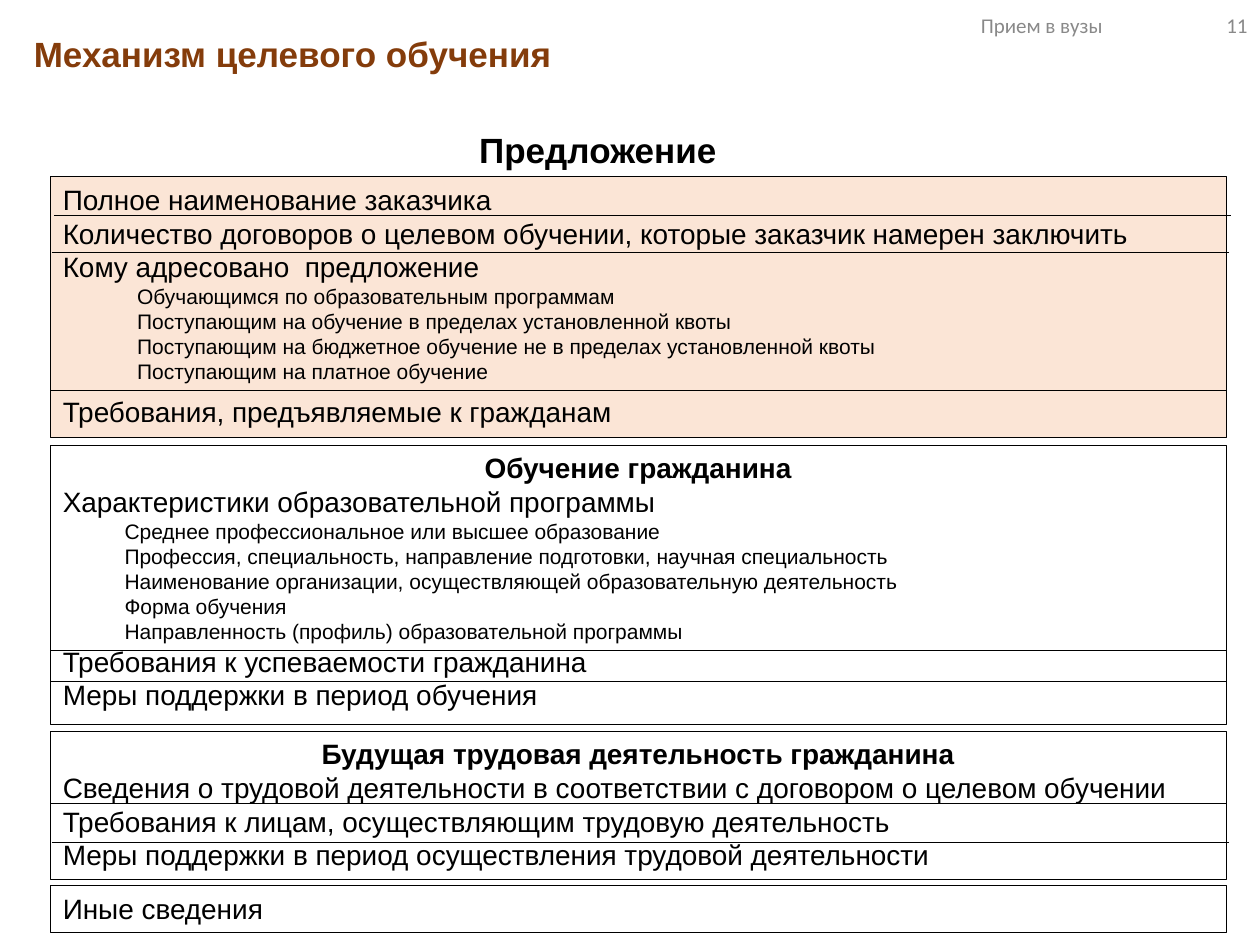
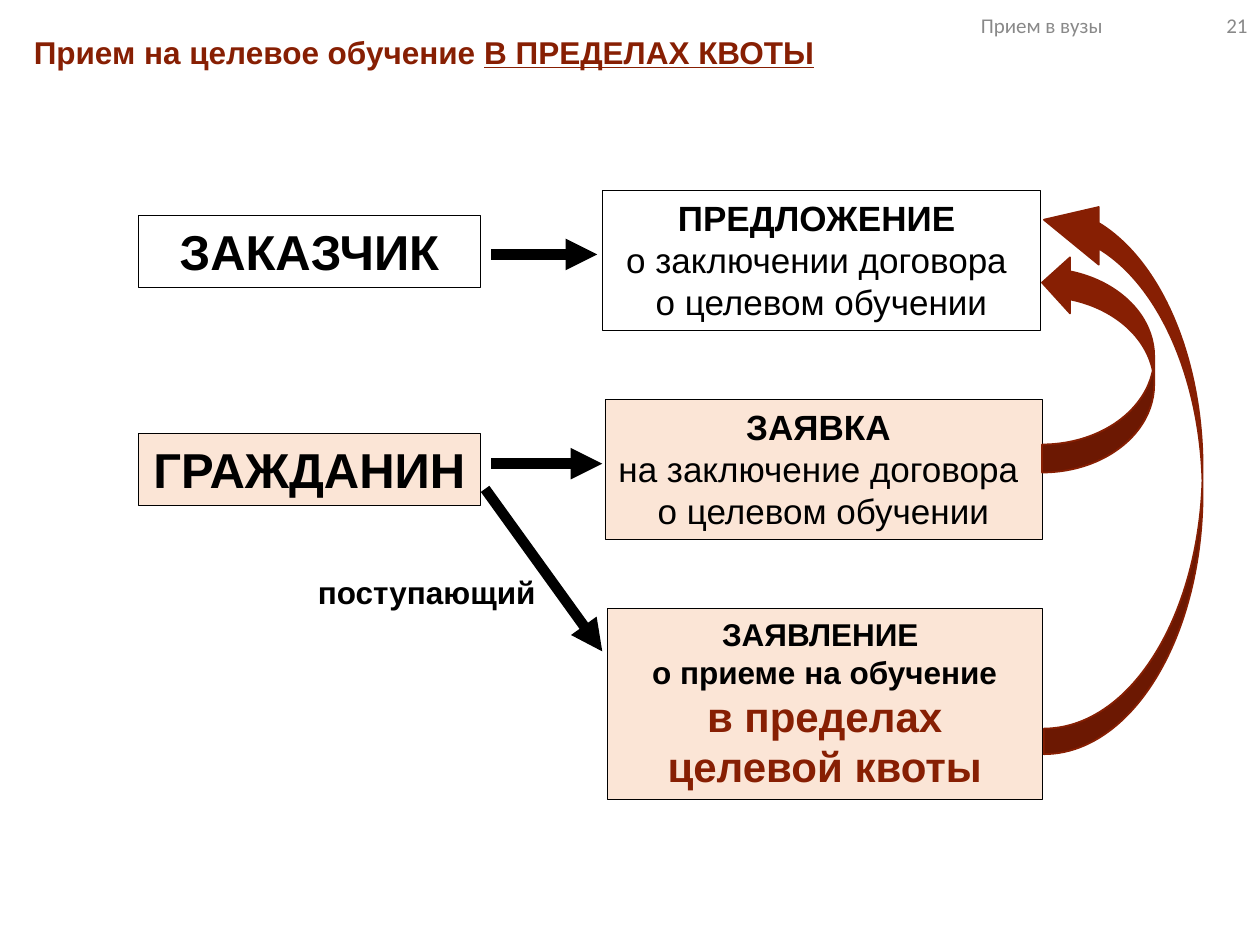
from lxml import etree
from pptx import Presentation
from pptx.dml.color import RGBColor
from pptx.enum.shapes import MSO_CONNECTOR, MSO_SHAPE
from pptx.enum.text import MSO_ANCHOR, PP_ALIGN
from pptx.oxml.ns import qn
from pptx.util import Inches, Pt

BLACK = RGBColor(0x00, 0x00, 0x00)
WHITE = RGBColor(0xFF, 0xFF, 0xFF)
PEACH = RGBColor(0xFB, 0xE5, 0xD6)
BROWN = RGBColor(0x84, 0x3C, 0x0B)
RUST = RGBColor(0x87, 0x1F, 0x03)
GREY = RGBColor(0x89, 0x89, 0x89)
LEFT, CENTER, RIGHT = PP_ALIGN.LEFT, PP_ALIGN.CENTER, PP_ALIGN.RIGHT
TOP, MIDDLE = MSO_ANCHOR.TOP, MSO_ANCHOR.MIDDLE
RECT, CURVED_ARROW = MSO_SHAPE.RECTANGLE, MSO_SHAPE.CURVED_UP_ARROW
STRAIGHT = MSO_CONNECTOR.STRAIGHT

# Content: every text is a list of (words, format) paragraphs
FOOTER = "Прием в вузы"
TITLE_11 = [("Механизм целевого обучения", dict(size=20, color=BROWN))]
TITLE_21 = [("Прием на целевое обучение ", dict(size=18, color=RUST)),
            ("В ПРЕДЕЛАХ КВОТЫ", dict(size=18, color=RUST, underline=True, same_line=True))]

HEAD = dict(bold=True, align=CENTER)
ADDRESSEE = dict(size=12, indent=0.59)
PROGRAM = dict(size=12, indent=0.49)

# Form sections: top, height, fill, paragraphs
FORM_LEFT, FORM_WIDTH = 0.4, 9.33
SECTIONS = [
    (1.4, 2.07, PEACH, [
        ("Полное наименование заказчика", {}),
        ("Количество договоров о целевом обучении, которые заказчик намерен заключить", {}),
        ("Кому адресовано  предложение", {}),
        ("Обучающимся по образовательным программам", ADDRESSEE),
        ("Поступающим на обучение в пределах установленной квоты", ADDRESSEE),
        ("Поступающим на бюджетное обучение не в пределах установленной квоты", ADDRESSEE),
        ("Поступающим на платное обучение", ADDRESSEE),
        ("Требования, предъявляемые к гражданам", dict(before=6))]),
    (3.53, 2.22, WHITE, [
        ("Обучение гражданина", HEAD),
        ("Характеристики образовательной программы", {}),
        ("Среднее профессиональное или высшее образование", PROGRAM),
        ("Профессия, специальность, направление подготовки, научная специальность", PROGRAM),
        ("Наименование организации, осуществляющей образовательную деятельность", PROGRAM),
        ("Форма обучения", PROGRAM),
        ("Направленность (профиль) образовательной программы", PROGRAM),
        ("Требования к успеваемости гражданина", {}),
        ("Меры поддержки в период обучения", {})]),
    (5.8, 1.18, WHITE, [
        ("Будущая трудовая деятельность гражданина", HEAD),
        ("Сведения о трудовой деятельности в соответствии с договором о целевом обучении", {}),
        ("Требования к лицам, осуществляющим трудовую деятельность", {}),
        ("Меры поддержки в период осуществления трудовой деятельности", {})]),
    (7.03, 0.37, WHITE, [("Иные сведения", {})]),
]
# Row dividers: left, y
DIVIDERS = [(0.43, 1.71), (0.41, 2), (0.4, 3.1), (0.4, 5.16),
            (0.4, 5.41), (0.4, 6.38), (0.41, 6.69)]
DIVIDER_WIDTH = 9.34

PARTY = dict(size=28, bold=True)
DOC_HEAD = dict(size=20, bold=True)
DOC = dict(size=20)
APPLICATION = dict(size=18, bold=True)
# Scheme boxes: position and size, fill, paragraphs
BOXES = [
    ((1.1, 1.71, 2.71, 0.57), WHITE, [("ЗАКАЗЧИК", PARTY)]),
    ((1.1, 3.44, 2.71, 0.57), PEACH, [("ГРАЖДАНИН", PARTY)]),
    ((4.78, 1.51, 3.48, 1.11), WHITE, [
        ("ПРЕДЛОЖЕНИЕ ", DOC_HEAD),
        ("о заключении договора ", DOC),
        ("о целевом обучении", DOC)]),
    ((4.8, 3.17, 3.47, 1.11), PEACH, [
        ("ЗАЯВКА ", DOC_HEAD),
        ("на заключение договора ", DOC),
        ("о целевом обучении", DOC)]),
    ((4.82, 4.83, 3.45, 1.51), PEACH, [
        ("ЗАЯВЛЕНИЕ ", APPLICATION),
        ("о приеме на обучение", APPLICATION),
        ("в пределах целевой квоты", dict(size=24, bold=True, color=RUST))]),
]
ARROWS = [(3.9, 2.02, 4.74, 2.02), (3.9, 3.68, 4.78, 3.68), (3.85, 3.88, 4.78, 5.17)]
# Return arrows: position and size before rotation, adjustments
RETURNS = [((7.85, 2.44, 1.73, 0.89), ()),
           ((6.68, 3.12, 4.47, 1.26), (0.161, 0.363, 0.346))]


def add_text(tf, text, size=16, font="Arial", color=BLACK, bold=False, underline=None,
             align=LEFT, indent=0, before=0, same_line=False):
    p = tf.paragraphs[-1]
    if p.runs and not same_line:
        p = tf.add_paragraph()
    p.alignment = align
    p.space_before = Pt(before)
    if indent:
        p._p.get_or_add_pPr().set("marL", str(Inches(indent)))
    r = p.add_run()
    r.text = text
    r.font.size, r.font.name = Pt(size), font
    r.font.bold, r.font.underline = bold, underline
    r.font.color.rgb = color


def fill_text(sp, paragraphs, anchor=TOP, **common):
    tf = sp.text_frame
    tf.word_wrap = True
    tf.vertical_anchor = anchor
    for text, fmt in paragraphs:
        add_text(tf, text, **{**common, **fmt})


def text_box(s, at, paragraphs, **common):
    fill_text(s.shapes.add_textbox(*map(Inches, at)), paragraphs, **common)


def shape(s, kind, at, fill, line=None, width=0.25):
    sp = s.shapes.add_shape(kind, *map(Inches, at))
    sp.shadow.inherit = False
    sp.fill.solid()
    sp.fill.fore_color.rgb = fill
    if line is None:
        sp.line.fill.background()
    else:
        sp.line.color.rgb = line
        sp.line.width = Pt(width)
    return sp


def line(s, ends, width, arrow=False):
    c = s.shapes.add_connector(STRAIGHT, *map(Inches, ends))
    c.line.color.rgb = BLACK
    c.line.width = Pt(width)
    if arrow:
        etree.SubElement(c.line._get_or_add_ln(), qn("a:tailEnd"), type="triangle")
    etree.SubElement(c._element.spPr, qn("a:effectLst"))


def new_slide(prs, title, number):
    s = prs.slides.add_slide(prs.slide_layouts[6])
    text_box(s, (0.17, 0.21, 9.8, 0.47), title, bold=True)
    for at, text in (((7.05, 0, 1.8, 0.4), FOOTER), ((9.3, 0, 0.7, 0.4), str(number))):
        text_box(s, at, [(text, {})], anchor=MIDDLE, size=12, font="Calibri",
                 color=GREY, align=RIGHT)
    return s


def build_form(prs):
    s = new_slide(prs, TITLE_11, 11)
    heading = shape(s, RECT, (3.21, 0.97, 3.07, 0.44), WHITE)
    fill_text(heading, [("Предложение", HEAD)], size=20)
    for top, height, fill, paragraphs in SECTIONS:
        section = shape(s, RECT, (FORM_LEFT, top, FORM_WIDTH, height), fill, BLACK)
        fill_text(section, paragraphs)
    for left, y in DIVIDERS:
        line(s, (left, y, left + DIVIDER_WIDTH, y), 0.5)


def build_scheme(prs):
    s = new_slide(prs, TITLE_21, 21)
    for ends in ARROWS:
        line(s, ends, 6, arrow=True)
    for at, fill, paragraphs in BOXES:
        fill_text(shape(s, RECT, at, fill, BLACK), paragraphs, align=CENTER)
    text_box(s, (1.99, 4.5, 2.36, 0.4), [("поступающий", {})], size=18, bold=True, align=RIGHT)
    for at, adjustments in RETURNS:
        sp = shape(s, CURVED_ARROW, at, RUST, RUST, 1)
        sp.rotation = 270
        for i, value in enumerate(adjustments):
            sp.adjustments[i] = value


def main():
    prs = Presentation()
    prs.slide_width, prs.slide_height = Inches(10), Inches(7.5)
    build_form(prs)
    build_scheme(prs)
    prs.save("out.pptx")


if __name__ == "__main__":
    main()
